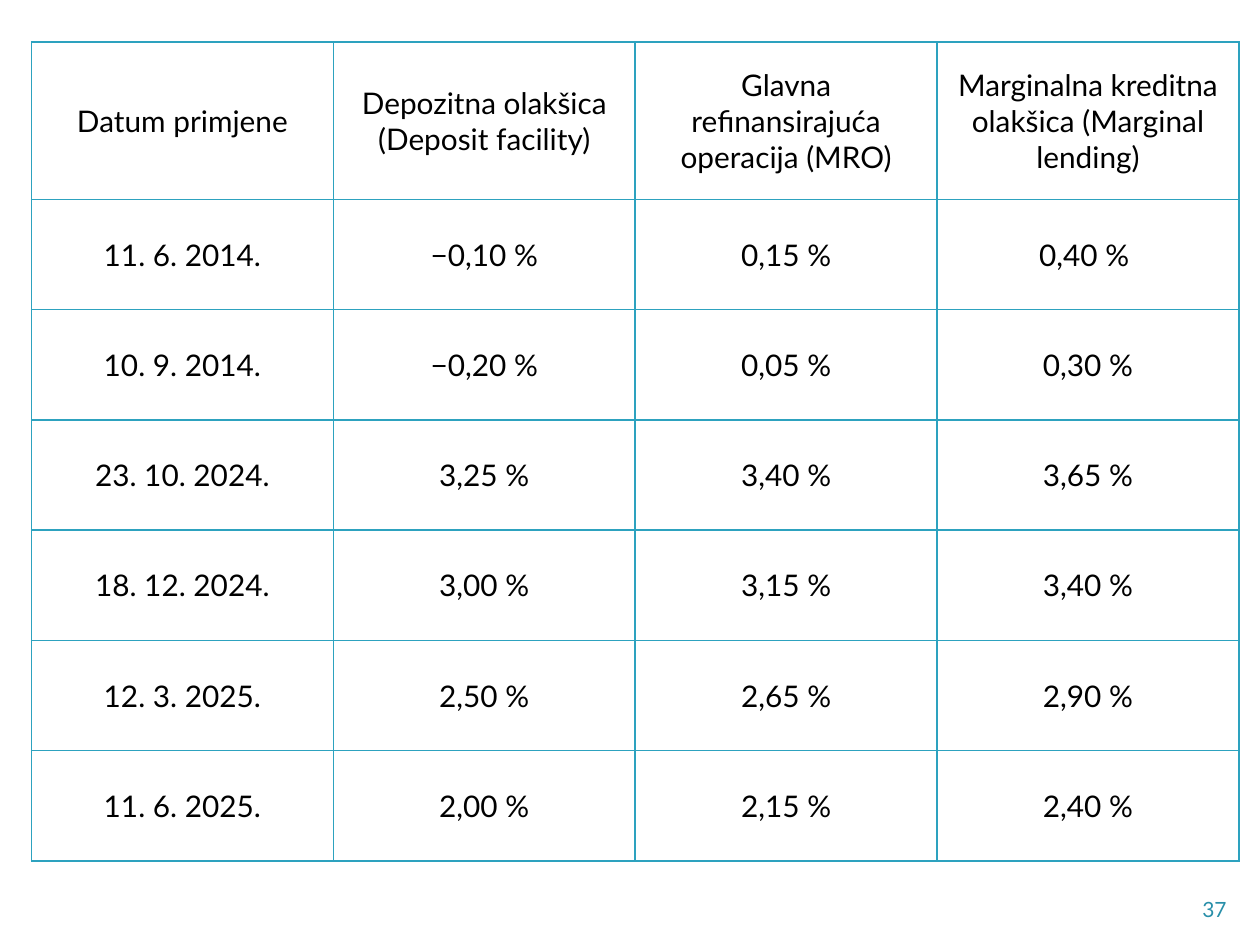
import dataclasses

import lxml.etree
import pptx
import pptx.dml.color
import pptx.enum.text
import pptx.oxml.ns
import pptx.util

Pt = pptx.util.Pt
Align = pptx.enum.text.PP_ALIGN
Middle = pptx.enum.text.MSO_ANCHOR.MIDDLE

RATES = [
    ("Datum primjene", "Depozitna olakšica (Deposit facility)",
     "Glavna refinansirajuća operacija (MRO)",
     "Marginalna kreditna olakšica (Marginal lending)"),
    ("11. 6. 2014.", "−0,10 %", "0,15 %", "0,40 % "),
    ("10. 9. 2014.", "−0,20 %", "0,05 %", "0,30 %"),
    ("23. 10. 2024.", "3,25 %", "3,40 %", "3,65 %"),
    ("18. 12. 2024.", "3,00 %", "3,15 %", "3,40 %"),
    ("12. 3. 2025.", "2,50 %", "2,65 %", "2,90 %"),
    ("11. 6. 2025.", "2,00 %", "2,15 %", "2,40 %"),
]


@dataclasses.dataclass
class Theme:
    font: str = "Lato"
    ink: str = "000000"
    accent: str = "288FA9"
    border: str = "2DA2BF"
    paper: str = "FFFFFF"
    body: float = 17
    small: float = 12
    line: float = 1


class Deck:
    """Holds the theme and the current slide, and draws each kind of element."""

    def __init__(self, theme, width, height):
        self.theme = theme
        self.deck = pptx.Presentation()
        self.deck.slide_width = Pt(width)
        self.deck.slide_height = Pt(height)
        self.slide = None

    def page(self):
        self.slide = self.deck.slides.add_slide(self.deck.slide_layouts[6])
        self.paint(self.slide.background.fill, self.theme.paper)

    def paint(self, fill, color):
        fill.solid()
        fill.fore_color.rgb = pptx.dml.color.RGBColor.from_string(color)

    def label(self, frame, text, size, color, align):
        para = frame.paragraphs[0]
        para.alignment = align
        run = para.add_run()
        run.text = text
        run.font.name = self.theme.font
        run.font.size = Pt(size)
        run.font.color.rgb = pptx.dml.color.RGBColor.from_string(color)

    def text(self, text, left, top, width, height):
        box = self.slide.shapes.add_textbox(
            Pt(left), Pt(top), Pt(width), Pt(height))
        frame = box.text_frame
        frame.word_wrap = True
        frame.vertical_anchor = Middle
        self.label(frame, text, self.theme.small, self.theme.accent, Align.RIGHT)

    def edge(self, cell):
        name = pptx.oxml.ns.qn
        props = cell._tc.get_or_add_tcPr()
        for side in ("a:lnL", "a:lnR", "a:lnT", "a:lnB"):
            line = lxml.etree.SubElement(
                props, name(side), w=str(Pt(self.theme.line)))
            fill = lxml.etree.SubElement(line, name("a:solidFill"))
            lxml.etree.SubElement(
                fill, name("a:srgbClr"), val=self.theme.border)

    def table(self, rows, left, top, width, head, step):
        count = len(rows[0])
        height = head + step * (len(rows) - 1)
        grid = self.slide.shapes.add_table(
            len(rows), count, Pt(left), Pt(top), Pt(width), Pt(height)).table
        grid.first_row = grid.horz_banding = False
        for col in grid.columns:
            col.width = Pt(width / count)
        for index, row in enumerate(rows):
            grid.rows[index].height = Pt(step if index else head)
            for place, text in enumerate(row):
                cell = grid.cell(index, place)
                self.edge(cell)
                cell.fill.background()
                cell.vertical_anchor = Middle
                self.label(cell.text_frame, text, self.theme.body,
                           self.theme.ink, Align.CENTER)

    def save(self):
        self.deck.save("out.pptx")


def main():
    deck = Deck(Theme(), 720, 540)
    deck.page()
    deck.text("37", 648, 510, 60, 19.2)
    deck.table(RATES, 18, 24, 690, 90, 63)
    deck.save()


if __name__ == "__main__":
    main()
